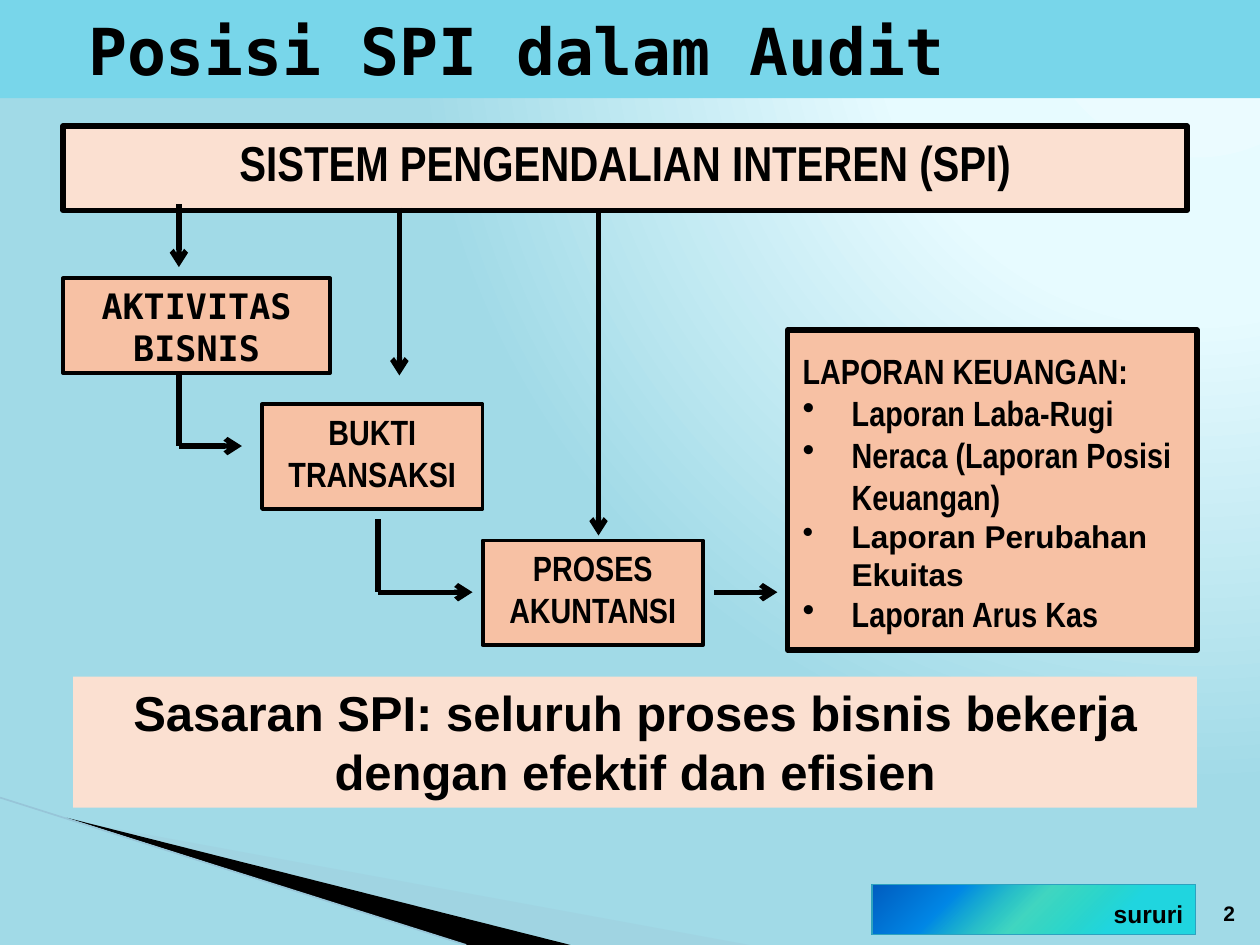
from lxml.etree import SubElement
from pptx import Presentation
from pptx.dml.color import RGBColor
from pptx.enum.shapes import MSO_CONNECTOR, MSO_SHAPE
from pptx.enum.text import MSO_ANCHOR, PP_ALIGN
from pptx.oxml.ns import qn
from pptx.util import Inches, Pt

BLACK = RGBColor(0x00, 0x00, 0x00)
SKY = RGBColor(0x78, 0xD6, 0xEA)
PEACH = RGBColor(0xF7, 0xC1, 0xA4)
PALE_PEACH = RGBColor(0xFB, 0xE0, 0xD1)
WEDGE_BLUE = RGBColor(0xA0, 0xCB, 0xDC)
EDGE_BLUE = RGBColor(0x97, 0xC5, 0xD8)
BADGE_EDGE = RGBColor(0x2D, 0xA2, 0xBF)
ICE = RGBColor(0xEB, 0xFB, 0xFF)
PALE_ICE = RGBColor(0xE7, 0xFB, 0xFF)
LAGOON = RGBColor(0xA1, 0xDA, 0xE7)
CYAN = RGBColor(0x21, 0xD6, 0xE0)
GREEN = RGBColor(0x03, 0xD4, 0xA8)
BLUE = RGBColor(0x00, 0x87, 0xE6)
DEEP_BLUE = RGBColor(0x00, 0x5C, 0xBF)

NARROW = "Arial Narrow"
MONO = "DejaVu Sans Mono"


def add_alpha(color_element, percent):
    SubElement(color_element, qn("a:alpha"), val=str(percent * 1000))


def set_gradient(fill, stops, angle=None, focus=None):
    fill.gradient()
    gradient = fill._xPr.find(qn("a:gradFill"))
    for child in list(gradient):
        gradient.remove(child)
    stop_list = SubElement(gradient, qn("a:gsLst"))
    for position, color, alpha in stops:
        stop = SubElement(stop_list, qn("a:gs"), pos=str(position * 1000))
        shade = SubElement(stop, qn("a:srgbClr"), val=str(color))
        if alpha < 100:
            add_alpha(shade, alpha)
    if focus:
        circle = SubElement(gradient, qn("a:path"), path="circle")
        sides = {side: str(value * 1000) for side, value in zip("ltrb", focus)}
        SubElement(circle, qn("a:fillToRect"), **sides)
    else:
        SubElement(gradient, qn("a:lin"), ang=str(angle * 60000), scaled="0")


def write(paragraph, text, size=20, font=NARROW, align=PP_ALIGN.CENTER):
    paragraph.alignment = align
    run = paragraph.add_run()
    run.text = text
    run.font.size = Pt(size)
    run.font.name = font
    run.font.bold = True
    run.font.color.rgb = BLACK


def fill_frame(frame, lines, anchor=MSO_ANCHOR.TOP, **text_format):
    frame.word_wrap = True
    frame.vertical_anchor = anchor
    for index, line in enumerate(lines):
        paragraph = frame.add_paragraph() if index else frame.paragraphs[0]
        write(paragraph, line, **text_format)


def add_box(slide, left, top, width, height, fill=None, edge=BLACK, weight=0):
    box = slide.shapes.add_shape(
        MSO_SHAPE.RECTANGLE, Inches(left), Inches(top), Inches(width), Inches(height)
    )
    box.shadow.inherit = False
    if fill is not None:
        box.fill.solid()
        box.fill.fore_color.rgb = fill
    if weight:
        box.line.color.rgb = edge
        box.line.width = Pt(weight)
    else:
        box.line.fill.background()
    return box


def add_line(slide, start, end, color=BLACK, weight=3, arrow=False):
    line = slide.shapes.add_connector(
        MSO_CONNECTOR.STRAIGHT, *[Inches(value) for value in (*start, *end)]
    )
    line.line.color.rgb = color
    line.line.width = Pt(weight)
    if arrow:
        SubElement(line.line._get_or_add_ln(), qn("a:tailEnd"), type="arrow")
    SubElement(line._element.spPr, qn("a:effectLst"))


def add_wedge(slide, points, color, alpha=100):
    corners = [(Inches(x), Inches(y)) for x, y in points]
    builder = slide.shapes.build_freeform(*corners[0])
    builder.add_line_segments(corners[1:], close=True)
    wedge = builder.convert_to_shape()
    wedge.shadow.inherit = False
    wedge.fill.solid()
    wedge.fill.fore_color.rgb = color
    wedge.line.fill.background()
    if alpha < 100:
        add_alpha(wedge._element.spPr.find(qn("a:solidFill"))[0], alpha)


def add_backdrop(slide):
    set_gradient(
        slide.background.fill,
        [(0, ICE, 100), (40, PALE_ICE, 100), (100, LAGOON, 100)],
        focus=(95, -106, 5, 206),
    )
    add_wedge(slide, [(0.55, 6.51), (5.95, 7.5), (4.56, 7.5)], WEDGE_BLUE, 40)
    add_wedge(slide, [(0.53, 6.49), (4.53, 7.5), (3.7, 7.5)], BLACK)
    add_line(slide, (0, 6.33), (3.7, 7.5), color=EDGE_BLUE, weight=0.95)


def add_reports(slide):
    frame = add_box(slide, 6.25, 2.62, 3.25, 2.54, PEACH, weight=3).text_frame
    frame.word_wrap = True
    frame.vertical_anchor = MSO_ANCHOR.TOP
    frame.margin_left = frame.margin_right = frame.margin_bottom = 0
    frame.margin_top = Inches(0.15)
    heading = frame.paragraphs[0]
    heading._p.get_or_add_pPr().set("indent", str(Inches(0.12)))
    write(heading, "LAPORAN KEUANGAN:", align=PP_ALIGN.LEFT)
    reports = [
        ("Laporan Laba-Rugi", 20, NARROW),
        ("Neraca (Laporan Posisi Keuangan)", 20, NARROW),
        ("Laporan Perubahan Ekuitas", 18, "Arial"),
        ("Laporan Arus Kas", 20, NARROW),
    ]
    for name, size, font in reports:
        item = frame.add_paragraph()
        properties = item._p.get_or_add_pPr()
        properties.set("marL", str(Inches(0.51)))
        properties.set("indent", str(Inches(-0.39)))
        SubElement(properties, qn("a:buChar"), char="•")
        write(item, name, size=size, font=font, align=PP_ALIGN.LEFT)


def add_flow(slide):
    steps = [
        (["AKTIVITAS", "BISNIS"], (0.5, 2.21, 2.12, 0.75), MONO),
        (["BUKTI", "TRANSAKSI"], (2.08, 3.21, 1.75, 0.83), NARROW),
        (["PROSES", "AKUNTANSI"], (3.83, 4.29, 1.75, 0.83), NARROW),
    ]
    for lines, place, font in steps:
        fill_frame(add_box(slide, *place, PEACH, weight=2.25).text_frame, lines, font=font)
    add_reports(slide)
    system = add_box(slide, 0.5, 1, 8.92, 0.67, PALE_PEACH, weight=3)
    fill_frame(system.text_frame, ["SISTEM PENGENDALIAN INTEREN (SPI)"], size=28)

    for start, end in [((1.42, 2.96), (1.42, 3.54)), ((3, 4.12), (3, 4.7))]:
        add_line(slide, start, end)
    arrows = [
        ((1.42, 1.62), (1.42, 2.12)),
        ((3.17, 1.65), (3.17, 2.98)),
        ((4.75, 1.67), (4.75, 4.25)),
        ((1.42, 3.54), (1.92, 3.54)),
        ((3, 4.7), (3.75, 4.7)),
        ((5.67, 4.7), (6.17, 4.7)),
    ]
    for start, end in arrows:
        add_line(slide, start, end, arrow=True)


def add_footer(slide):
    number = slide.shapes.add_textbox(Inches(9.5), Inches(7), Inches(0.4), Inches(0.4))
    fill_frame(number.text_frame, ["2"], anchor=MSO_ANCHOR.BOTTOM, size=12,
               font="Arial", align=PP_ALIGN.RIGHT)
    badge = add_box(slide, 6.92, 7.02, 2.57, 0.4, edge=BADGE_EDGE, weight=0.75)
    set_gradient(
        badge.fill,
        [(25, CYAN, 100), (51, GREEN, 60), (75, BLUE, 100), (100, DEEP_BLUE, 100)],
        angle=225,
    )
    fill_frame(badge.text_frame, ["sururi"], anchor=MSO_ANCHOR.BOTTOM, size=14,
               font="Arial", align=PP_ALIGN.RIGHT)


def main():
    presentation = Presentation()
    presentation.slide_width = Inches(10)
    presentation.slide_height = Inches(7.5)
    slide = presentation.slides.add_slide(presentation.slide_layouts[6])
    add_backdrop(slide)
    title = add_box(slide, 0, 0, 10, 0.78, SKY).text_frame
    title.margin_left = Inches(0.7)
    fill_frame(title, ["Posisi SPI dalam Audit"], anchor=MSO_ANCHOR.MIDDLE,
               size=37, font=MONO, align=PP_ALIGN.LEFT)
    add_flow(slide)
    goal = add_box(slide, 0.58, 5.37, 8.92, 1.04, PALE_PEACH)
    fill_frame(
        goal.text_frame,
        ["Sasaran SPI: seluruh proses bisnis bekerja", "dengan efektif dan efisien"],
        size=28, font="Arial",
    )
    add_footer(slide)
    presentation.save("out.pptx")


if __name__ == "__main__":
    main()
